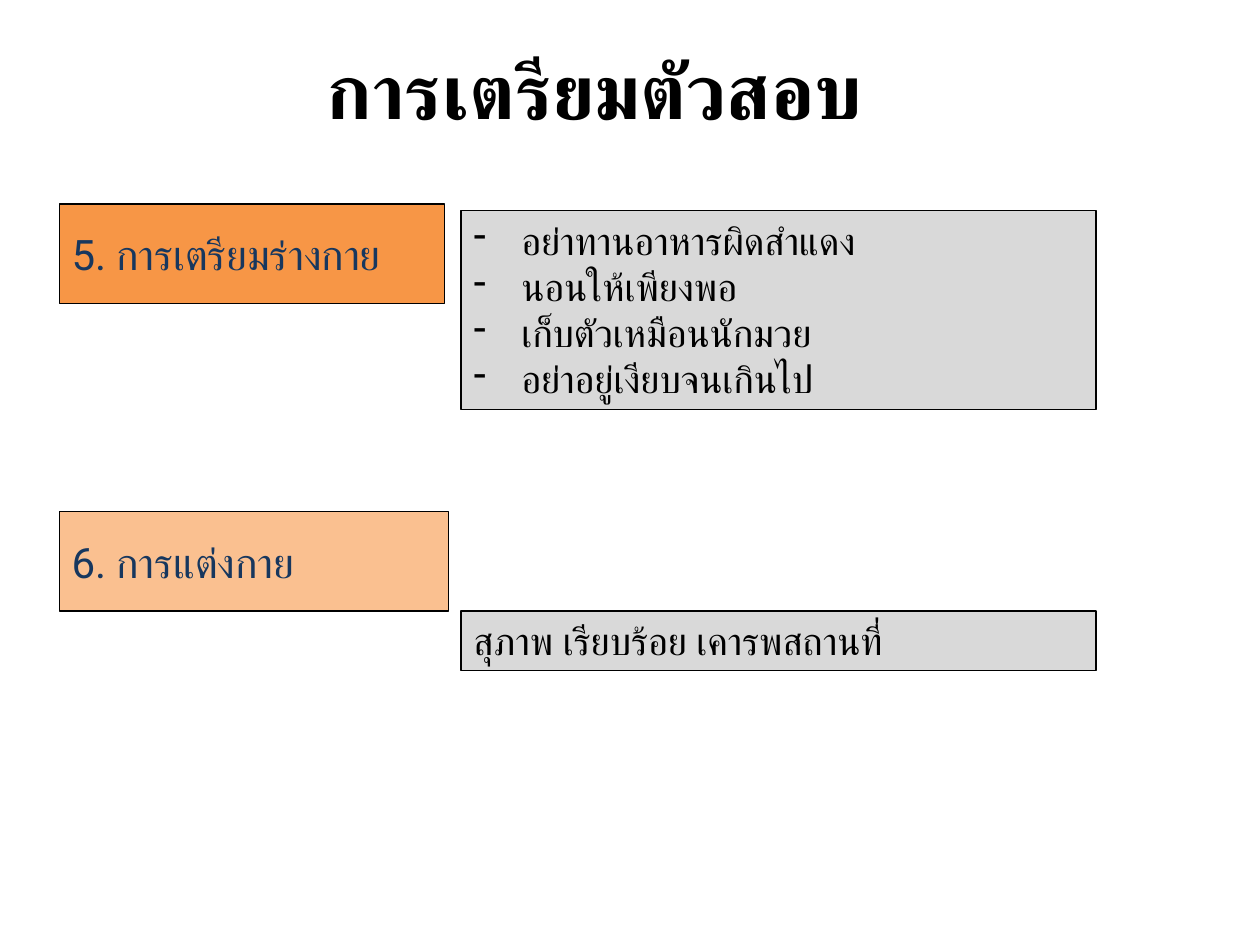
"""Build the Thai exam preparation slide on body care and dress."""
import pptx
import pptx.dml.color
import pptx.enum.shapes
import pptx.enum.text
import pptx.oxml.ns
import pptx.util
import lxml.etree

Inches = pptx.util.Inches
RGB = pptx.dml.color.RGBColor
Anchor = pptx.enum.text.MSO_ANCHOR
Align = pptx.enum.text.PP_ALIGN
qn = pptx.oxml.ns.qn

FONT = "Roboto"
BLACK = RGB(0x00, 0x00, 0x00)
NAVY = RGB(0x17, 0x37, 0x5E)
ORANGE = RGB(0xF7, 0x96, 0x46)
PEACH = RGB(0xFA, 0xC0, 0x90)
GREY = RGB(0xD9, 0xD9, 0xD9)


def style(para, size, color, align, bold=False):
    para.alignment = align
    font = para.font
    font.name = FONT
    font.size = pptx.util.Pt(size)
    font.bold = bold
    font.color.rgb = color
    props = para._p.get_or_add_pPr().find(qn("a:defRPr"))
    lxml.etree.SubElement(props, qn("a:cs"), typeface=FONT)


def dash(para):
    props = para._p.get_or_add_pPr()
    props.set("marL", str(Inches(0.38)))
    props.set("indent", str(-Inches(0.38)))
    lxml.etree.SubElement(props, qn("a:buChar"), char="-")


deck = pptx.Presentation()
deck.slide_width = Inches(10)
deck.slide_height = Inches(7.5)
slide = deck.slides.add_slide(deck.slide_layouts[5])

title = slide.shapes.title
title.left, title.top = Inches(0.35), Inches(0.04)
title.width, title.height = Inches(8.74), Inches(1.33)
title.text_frame.text = "การเตรียมตัวสอบ"
title.text_frame.vertical_anchor = Anchor.MIDDLE
style(title.text_frame.paragraphs[0], 44, BLACK, Align.CENTER, True)

tips = [
    "อย่าทานอาหารผิดสำแดง",
    "นอนให้เพียงพอ",
    "เก็บตัวเหมือนนักมวย",
    "อย่าอยู่เงียบจนเกินไป",
]
boxes = [
    (0.47, 1.62, 3.06, 0.79, ORANGE, NAVY, 24, Anchor.MIDDLE, ["5. การเตรียมร่างกาย"]),
    (3.66, 1.67, 5.04, 1.58, GREY, BLACK, 22, Anchor.TOP, tips),
    (0.47, 4.06, 3.09, 0.79, PEACH, NAVY, 24, Anchor.MIDDLE, ["6. การแต่งกาย"]),
    (3.66, 4.85, 5.04, 0.47, GREY, BLACK, 22, Anchor.TOP, ["สุภาพ เรียบร้อย เคารพสถานที่"]),
]
for left, top, width, height, fill, ink, size, anchor, lines in boxes:
    box = slide.shapes.add_shape(
        pptx.enum.shapes.MSO_SHAPE.RECTANGLE,
        Inches(left), Inches(top), Inches(width), Inches(height),
    )
    box.shadow.inherit = False
    box.fill.solid()
    box.fill.fore_color.rgb = fill
    box.line.color.rgb = BLACK
    box.line.width = pptx.util.Pt(0.75)
    frame = box.text_frame
    frame.word_wrap = True
    frame.vertical_anchor = anchor
    frame.text = "\n".join(lines)
    for para in frame.paragraphs:
        if len(lines) > 1:
            dash(para)
        style(para, size, ink, Align.LEFT)

deck.save("out.pptx")
